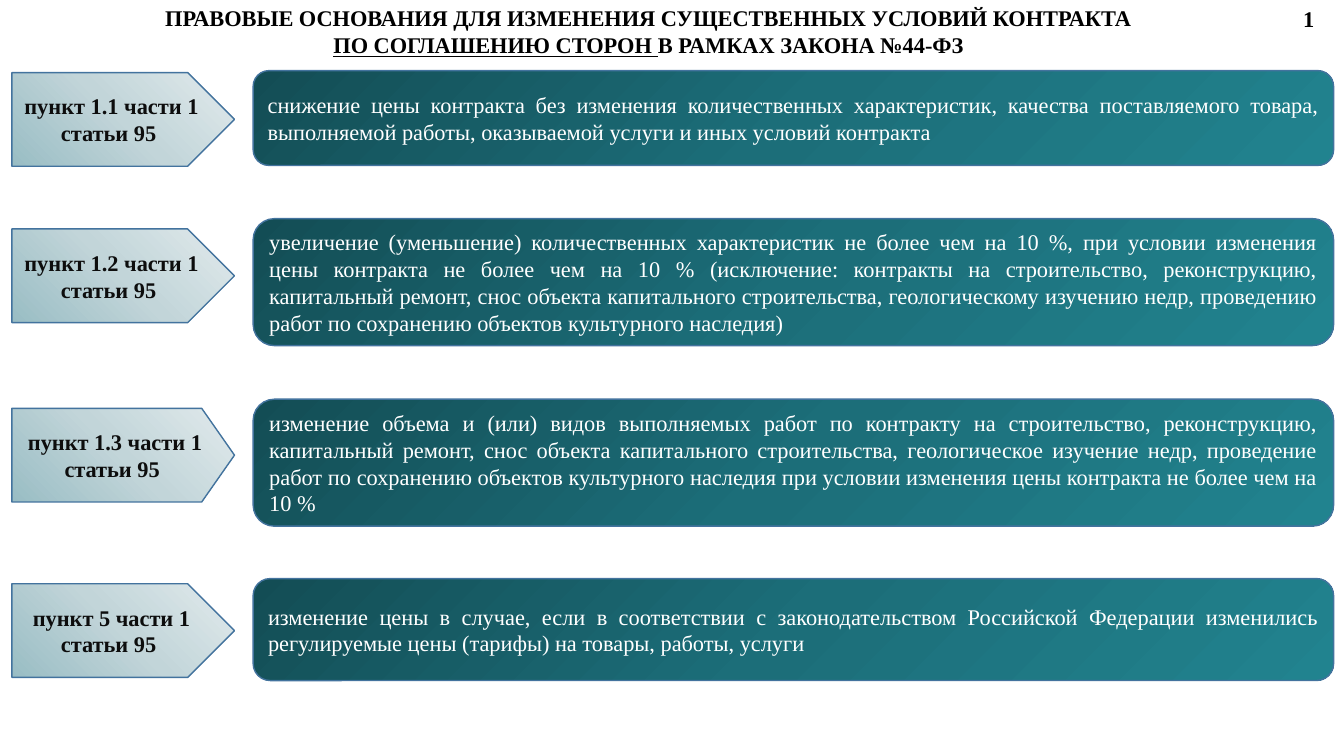
"""Build a slide listing the legal grounds for changing contract terms."""
import copy

import pptx
import pptx.dml.color
import pptx.enum.shapes
import pptx.enum.text
import pptx.util

Cm = pptx.util.Cm
RGBColor = pptx.dml.color.RGBColor
Shape = pptx.enum.shapes.MSO_SHAPE
Align = pptx.enum.text.PP_ALIGN
Anchor = pptx.enum.text.MSO_ANCHOR

BLACK = RGBColor(0x00, 0x00, 0x00)
INK = RGBColor(0x0D, 0x0D, 0x0D)
WHITE = RGBColor(0xFF, 0xFF, 0xFF)
OUTLINE = RGBColor(0x43, 0x73, 0x9E)
TEAL = (RGBColor(0x13, 0x4D, 0x55), RGBColor(0x1C, 0x6E, 0x79), RGBColor(0x21, 0x83, 0x8F))
PALE = (RGBColor(0x99, 0xBD, 0xC4), RGBColor(0xC2, 0xD5, 0xD9), RGBColor(0xE1, 0xEA, 0xEC))

LABEL_LEFT, LABEL_WIDTH, LABEL_HEIGHT = 0.3, 5.61, 2.36
GROUND_LEFT, GROUND_WIDTH = 6.38, 27.23

GROUNDS = [
    ("пункт 1.1 части 1 статьи 95 ", 1.83, 0.5, 1.78, 2.39,
     "снижение цены контракта без изменения количественных характеристик, качества "
     "поставляемого товара, выполняемой работы, оказываемой услуги и иных условий контракта"),
    ("пункт 1.2 части 1 статьи 95 ", 5.77, 0.5, 5.51, 3.2,
     "увеличение (уменьшение) количественных характеристик не более чем на 10 %, при условии "
     "изменения цены контракта не более чем на 10 % (исключение: контракты на строительство, "
     "реконструкцию, капитальный ремонт, снос объекта капитального строительства, "
     "геологическому изучению недр, проведению работ по сохранению объектов культурного наследия)"),
    ("пункт 1.3 части 1 статьи 95 ", 10.29, 0.35, 10.06, 3.2,
     "изменение объема и (или) видов выполняемых работ по контракту на строительство, "
     "реконструкцию, капитальный ремонт, снос объекта капитального строительства, "
     "геологическое изучение недр, проведение работ по сохранению объектов культурного "
     "наследия при условии изменения цены контракта не более чем на 10 %"),
    ("пункт 5 части 1 статьи 95 ", 14.71, 0.5, 14.58, 2.57,
     "изменение цены в случае, если в соответствии с законодательством Российской Федерации "
     "изменились регулируемые цены (тарифы) на товары, работы, услуги"),
]


def write(para, text, color=BLACK, bold=False, underline=False, align=Align.CENTER):
    para.alignment = align
    span = para.add_run()
    span.text = text
    font = span.font
    font.name = "Times New Roman"
    font.size = pptx.util.Pt(16)
    font.bold = bold
    font.underline = underline
    font.color.rgb = color


def fill_gradient(shape, colors, angle):
    shape.fill.gradient()
    shape.fill.gradient_angle = angle
    stop_list = shape._element.spPr.gradFill.gsLst
    stop_list.append(copy.deepcopy(stop_list[0]))
    for index, (stop, color) in enumerate(zip(shape.fill.gradient_stops, colors)):
        stop.position = index / (len(colors) - 1)
        stop.color.rgb = color


def add_panel(page, kind, left, top, width, height, colors, angle):
    panel = page.shapes.add_shape(kind, Cm(left), Cm(top), Cm(width), Cm(height))
    panel.shadow.inherit = False
    fill_gradient(panel, colors, angle)
    panel.line.color.rgb = OUTLINE
    panel.line.width = pptx.util.Pt(1)
    panel.text_frame.word_wrap = True
    panel.text_frame.vertical_anchor = Anchor.MIDDLE
    return panel


def add_ground(page, label, label_top, point, top, height, text):
    ground = add_panel(page, Shape.ROUNDED_RECTANGLE, GROUND_LEFT, top,
                       GROUND_WIDTH, height, TEAL, 315)
    write(ground.text_frame.paragraphs[0], text, color=WHITE, align=Align.JUSTIFY)
    arrow = add_panel(page, Shape.PENTAGON, LABEL_LEFT, label_top,
                      LABEL_WIDTH, LABEL_HEIGHT, PALE, 45)
    arrow.adjustments[0] = point
    write(arrow.text_frame.paragraphs[0], label, color=INK, bold=True)


def set_title(page):
    title = page.shapes.title
    title.left, title.top, title.width, title.height = Cm(0.58), Cm(-0.05), Cm(31.67), Cm(1.68)
    frame = title.text_frame
    frame.auto_size = pptx.enum.text.MSO_AUTO_SIZE.NONE
    frame.word_wrap = True
    frame.vertical_anchor = Anchor.MIDDLE
    write(frame.paragraphs[0],
          "ПРАВОВЫЕ ОСНОВАНИЯ ДЛЯ ИЗМЕНЕНИЯ СУЩЕСТВЕННЫХ УСЛОВИЙ КОНТРАКТА ", bold=True)
    para = frame.add_paragraph()
    write(para, "ПО СОГЛАШЕНИЮ СТОРОН ", bold=True, underline=True)
    write(para, "В РАМКАХ ЗАКОНА №44-ФЗ ", bold=True)


def add_page_number(page, number):
    box = page.shapes.add_textbox(Cm(32.59), Cm(0), Cm(1.04), Cm(0.94))
    box.text_frame.word_wrap = True
    write(box.text_frame.paragraphs[0], number, bold=True, align=Align.LEFT)


def main():
    deck = pptx.Presentation()
    deck.slide_width, deck.slide_height = Cm(33.87), Cm(19.05)
    page = deck.slides.add_slide(deck.slide_layouts.get_by_name("Title Only"))
    set_title(page)
    for ground in GROUNDS:
        add_ground(page, *ground)
    add_page_number(page, "1")
    deck.save("out.pptx")


if __name__ == "__main__":
    main()
